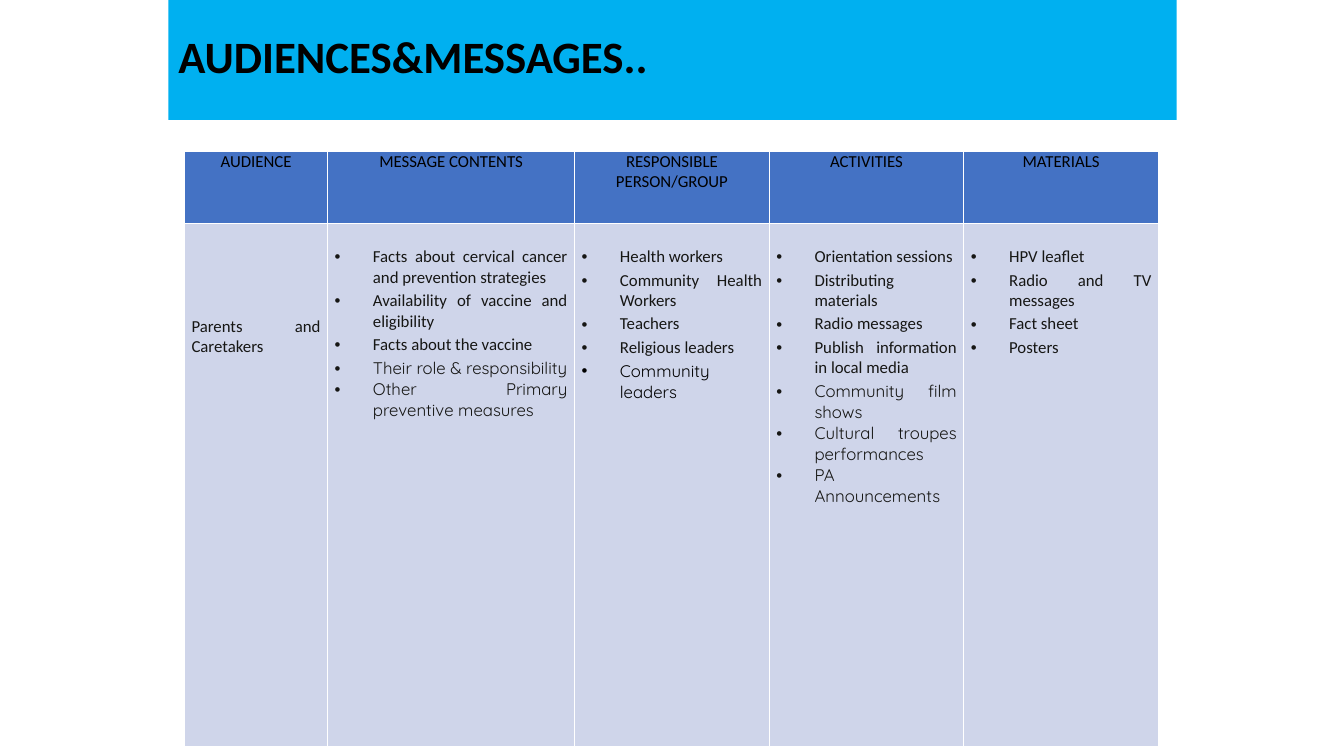
"""Build the slide on audiences and messages: a title band above a planning table."""
from lxml import etree
from pptx import Presentation
from pptx.dml.color import RGBColor
from pptx.enum.shapes import MSO_SHAPE
from pptx.enum.text import MSO_ANCHOR, PP_ALIGN
from pptx.oxml.ns import qn
from pptx.util import Inches, Pt

LEFT, CENTER, JUSTIFY = PP_ALIGN.LEFT, PP_ALIGN.CENTER, PP_ALIGN.JUSTIFY
RECTANGLE, MIDDLE = MSO_SHAPE.RECTANGLE, MSO_ANCHOR.MIDDLE

BAND = RGBColor(0x00, 0xB0, 0xF0)
HEADER = RGBColor(0x44, 0x72, 0xC4)
BODY = RGBColor(0xCF, 0xD5, 0xEA)
BLACK = RGBColor(0x00, 0x00, 0x00)
INK = RGBColor(0x16, 0x16, 0x14)
WHITE = RGBColor(0xFF, 0xFF, 0xFF)

MAIN_FONT, EXTRA_FONT = "Calibri", "Quicksand"
INDENT = 0.38

TITLE = "AUDIENCES&MESSAGES.."
AUDIENCE = "Parents and Caretakers"
COLUMNS = [
    {"head": "AUDIENCE", "width": 1.42},
    {"head": "MESSAGE CONTENTS", "width": 2.45,
     "main": ["Facts about cervical cancer and prevention strategies",
              "Availability of vaccine and eligibility",
              "Facts about the vaccine"],
     "extra": ["Their role & responsibility",
               "Other Primary preventive measures"]},
    {"head": "RESPONSIBLE PERSON/GROUP", "width": 1.93,
     "main": ["Health workers", "Community Health Workers", "Teachers",
              "Religious leaders"],
     "extra": ["Community leaders"],
     "extra_format": {"align": LEFT, "color": BLACK}},
    {"head": "ACTIVITIES", "width": 1.93,
     "main": ["Orientation sessions", "Distributing materials",
              "Radio messages", "Publish information in local media"],
     "extra": ["Community film shows", "Cultural troupes performances",
               "PA Announcements"]},
    {"head": "MATERIALS", "width": 1.93,
     "main": ["HPV leaflet", "Radio and TV messages", "Fact sheet",
              "Posters"]},
]
ROW_HEIGHTS = [0.72, 5.19]


def write(frame, text, size=12, font=MAIN_FONT, color=INK, bold=False,
          align=JUSTIFY, after=0, line=1.0, bullet=False):
    """Write one paragraph, reusing the first one while it is empty."""
    para = frame.paragraphs[0]
    if para.runs:
        para = frame.add_paragraph()
    para.alignment = align
    para.space_after = Pt(after)
    para.line_spacing = line
    span = para.add_run()
    span.text = text
    span.font.size = Pt(size)
    span.font.name = font
    span.font.bold = bold
    span.font.color.rgb = color
    if bullet:
        properties = para._p.get_or_add_pPr()
        properties.set("marL", str(Inches(INDENT)))
        properties.set("indent", str(-Inches(INDENT)))
        etree.SubElement(properties, qn("a:buFont")).set("typeface", "Arial")
        etree.SubElement(properties, qn("a:buChar")).set("char", "•")


def style_cell(cell, color, top=0):
    """Give a cell its margins, white borders and fill."""
    cell.margin_left = cell.margin_right = Inches(0.07)
    cell.margin_top, cell.margin_bottom = Inches(top), 0
    properties = cell._tc.get_or_add_tcPr()
    for side in ("a:lnL", "a:lnR", "a:lnT", "a:lnB"):
        border = etree.SubElement(properties, qn(side), w=str(Pt(1)))
        fill = etree.SubElement(border, qn("a:solidFill"))
        etree.SubElement(fill, qn("a:srgbClr"), val=str(WHITE))
    cell.fill.solid()
    cell.fill.fore_color.rgb = color


def add_title(page):
    """Draw the title band."""
    box = page.shapes.add_shape(RECTANGLE, Inches(1.67), Inches(-0.02),
                                Inches(10), Inches(1.21))
    box.shadow.inherit = False
    box.fill.solid()
    box.fill.fore_color.rgb = BAND
    box.line.fill.background()
    box.text_frame.word_wrap = True
    box.text_frame.vertical_anchor = MIDDLE
    write(box.text_frame, TITLE, size=32, color=BLACK, bold=True,
          align=LEFT, line=0.9)


def add_plan(page):
    """Draw the planning table."""
    total_width = sum(column["width"] for column in COLUMNS)
    plan = page.shapes.add_table(
        len(ROW_HEIGHTS), len(COLUMNS), Inches(1.83), Inches(1.5),
        Inches(total_width), Inches(sum(ROW_HEIGHTS))).table
    for row, height in zip(plan.rows, ROW_HEIGHTS):
        row.height = Inches(height)
    for index, column in enumerate(COLUMNS):
        plan.columns[index].width = Inches(column["width"])
        head, body = plan.cell(0, index), plan.cell(1, index)
        style_cell(head, HEADER)
        write(head.text_frame, column["head"], color=BLACK, align=CENTER)
        style_cell(body, BODY, top=0.23 if "main" in column else 0.92)
        if "main" not in column:
            write(body.text_frame, AUDIENCE, after=2)
        for text in column.get("main", []):
            write(body.text_frame, text, after=2, bullet=True)
        for text in column.get("extra", []):
            write(body.text_frame, text, font=EXTRA_FONT, bullet=True,
                  **column.get("extra_format", {}))


def main():
    """Build and save the deck."""
    deck = Presentation()
    deck.slide_width, deck.slide_height = Inches(13.33), Inches(7.5)
    page = deck.slides.add_slide(deck.slide_layouts[6])
    add_title(page)
    add_plan(page)
    deck.save("out.pptx")


if __name__ == "__main__":
    main()
